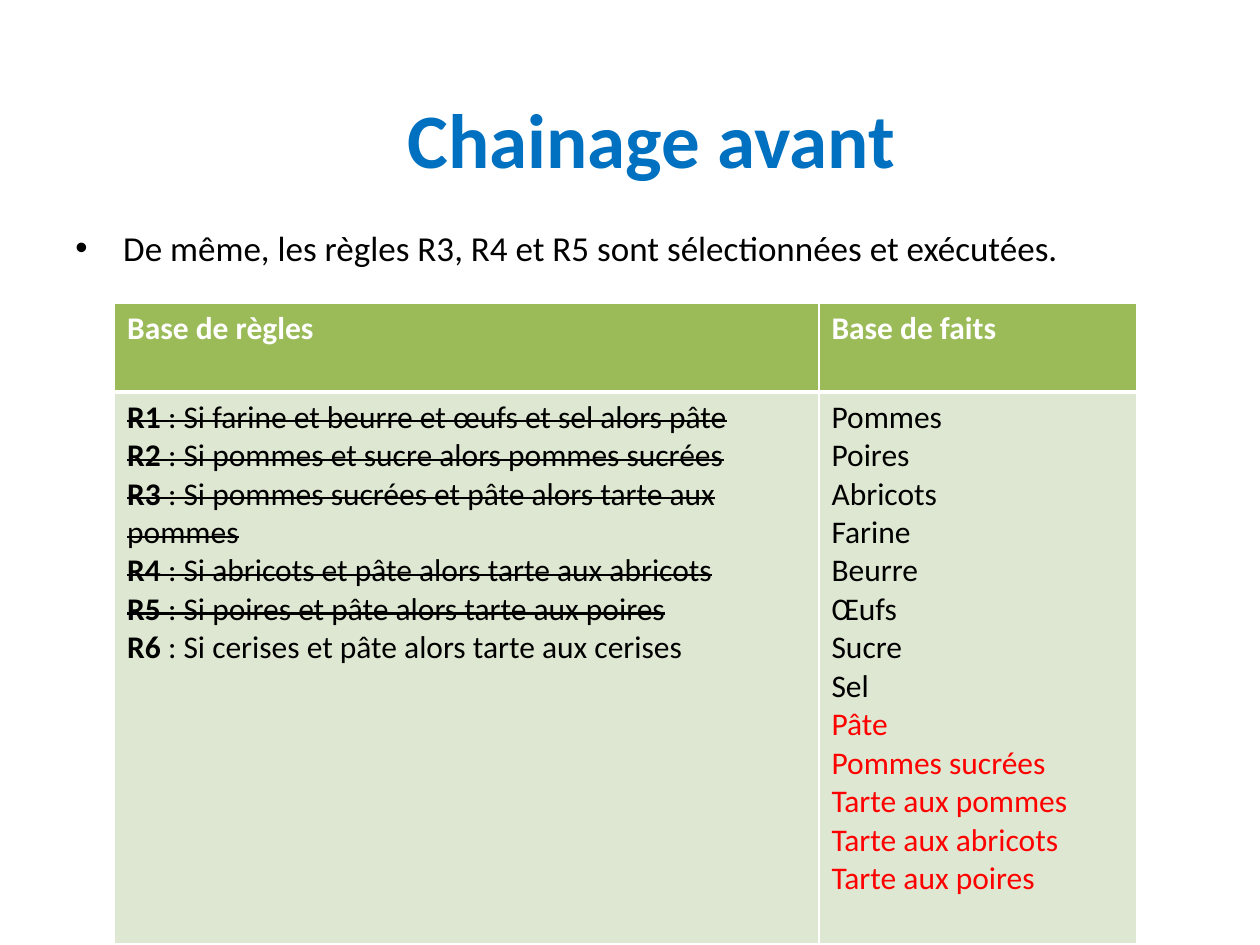
from pptx import Presentation
from pptx import util as u
from pptx.dml.color import RGBColor
from pptx.enum import text
from pptx.oxml import xmlchemy
from lxml import etree

FONT = "Calibri"
BLUE = RGBColor(0x00, 0x70, 0xC0)
BLACK = RGBColor(0x00, 0x00, 0x00)
WHITE = RGBColor(0xFF, 0xFF, 0xFF)
RED = RGBColor(0xFF, 0x00, 0x00)
GREEN = RGBColor(0x9B, 0xBB, 0x59)
PALE_GREEN = RGBColor(0xDE, 0xE7, 0xD1)

RULES = [
    "farine et beurre et œufs et sel alors pâte",
    "pommes et sucre alors pommes sucrées",
    "pommes sucrées et pâte alors tarte aux pommes",
    "abricots et pâte alors tarte aux abricots",
    "poires et pâte alors tarte aux poires",
    "cerises et pâte alors tarte aux cerises",
]
EXECUTED_RULES = 5
INITIAL_FACTS = ["Pommes", "Poires", "Abricots", "Farine", "Beurre", "Œufs", "Sucre", "Sel"]
DEDUCED_FACTS = ["Pâte", "Pommes sucrées", "Tarte aux pommes", "Tarte aux abricots",
                 "Tarte aux poires"]


def add_run(paragraph, words, size, color, bold=False, strike=False):
    run = paragraph.add_run()
    run.text = words
    run.font.name = FONT
    run.font.size = u.Pt(size)
    run.font.bold = bold
    run.font.color.rgb = color
    if strike:
        run.font._element.set("strike", "sngStrike")


def add_child(parent, tag, **attributes):
    child = etree.SubElement(parent, xmlchemy.qn(tag))
    for name, value in attributes.items():
        child.set(name, str(value))
    return child


def add_text_frame(slide, left, top, width, height):
    frame = slide.shapes.add_textbox(left, top, width, height).text_frame
    frame.word_wrap = True
    return frame


def add_title(slide, left, top, width, height):
    frame = add_text_frame(slide, left, top, width, height)
    frame.vertical_anchor = text.MSO_ANCHOR.MIDDLE
    paragraph = frame.paragraphs[0]
    paragraph.alignment = text.PP_ALIGN.CENTER
    add_run(paragraph, "Chainage avant", 44, BLUE, bold=True)


def add_bullet(slide, left, top, width, height):
    frame = add_text_frame(slide, left, top, width, height)
    paragraph = frame.paragraphs[0]
    paragraph.space_before = u.Pt(4)
    properties = paragraph._p.get_or_add_pPr()
    indent = u.Inches(0.38)
    properties.set("marL", str(indent))
    properties.set("indent", str(-indent))
    add_child(properties, "a:buFont", typeface="Arial")
    add_child(properties, "a:buChar", char="•")
    add_run(paragraph, "De même, les règles R3, R4 et R5 sont sélectionnées et exécutées.",
            20, BLACK)


def style_cell(cell, fill, top_width, bottom_width):
    """Draw white borders, then the fill, in the order the schema asks for."""
    properties = cell._tc.get_or_add_tcPr()
    widths = {"a:lnL": 1, "a:lnR": 1, "a:lnT": top_width, "a:lnB": bottom_width}
    for tag, width in widths.items():
        line = add_child(properties, tag, w=u.Pt(width))
        add_child(add_child(line, "a:solidFill"), "a:srgbClr", val=WHITE)
    cell.fill.solid()
    cell.fill.fore_color.rgb = fill


def next_paragraph(frame, index):
    return frame.add_paragraph() if index else frame.paragraphs[0]


def fill_rules(frame):
    for index, rule in enumerate(RULES):
        paragraph = next_paragraph(frame, index)
        executed = index < EXECUTED_RULES
        add_run(paragraph, f"R{index + 1}", 18, BLACK, bold=True, strike=executed)
        add_run(paragraph, f" : Si {rule}", 18, BLACK, strike=executed)


def fill_facts(frame):
    for index, fact in enumerate(INITIAL_FACTS + DEDUCED_FACTS):
        color = BLACK if index < len(INITIAL_FACTS) else RED
        add_run(next_paragraph(frame, index), fact, 18, color)


def add_knowledge_table(slide, left, top, width, height):
    table = slide.shapes.add_table(2, 2, left, top, width, height).table
    table.horz_banding = False
    facts_width, header_height = u.Inches(2.52), u.Inches(0.7)
    table.columns[0].width = width - facts_width
    table.columns[1].width = facts_width
    table.rows[0].height = header_height
    table.rows[1].height = height - header_height

    columns = [("Base de règles", fill_rules), ("Base de faits", fill_facts)]
    for column, (heading, fill_body) in enumerate(columns):
        header, body = table.cell(0, column), table.cell(1, column)
        style_cell(header, GREEN, 1, 3)
        style_cell(body, PALE_GREEN, 3, 1)
        add_run(header.text_frame.paragraphs[0], heading, 18, WHITE, bold=True)
        fill_body(body.text_frame)


def main():
    presentation = Presentation()
    presentation.slide_width = u.Inches(10)
    presentation.slide_height = u.Inches(7.5)
    slide = presentation.slides.add_slide(presentation.slide_layouts[6])
    add_bullet(slide, u.Inches(0.5), u.Inches(1.75), u.Inches(9), u.Inches(0.5))
    add_knowledge_table(slide, u.Inches(0.91), u.Inches(2.41), u.Inches(8.11), u.Inches(5.08))
    add_title(slide, u.Inches(0.67), u.Inches(0.47), u.Inches(9), u.Inches(1.25))
    presentation.save("out.pptx")


if __name__ == "__main__":
    main()
